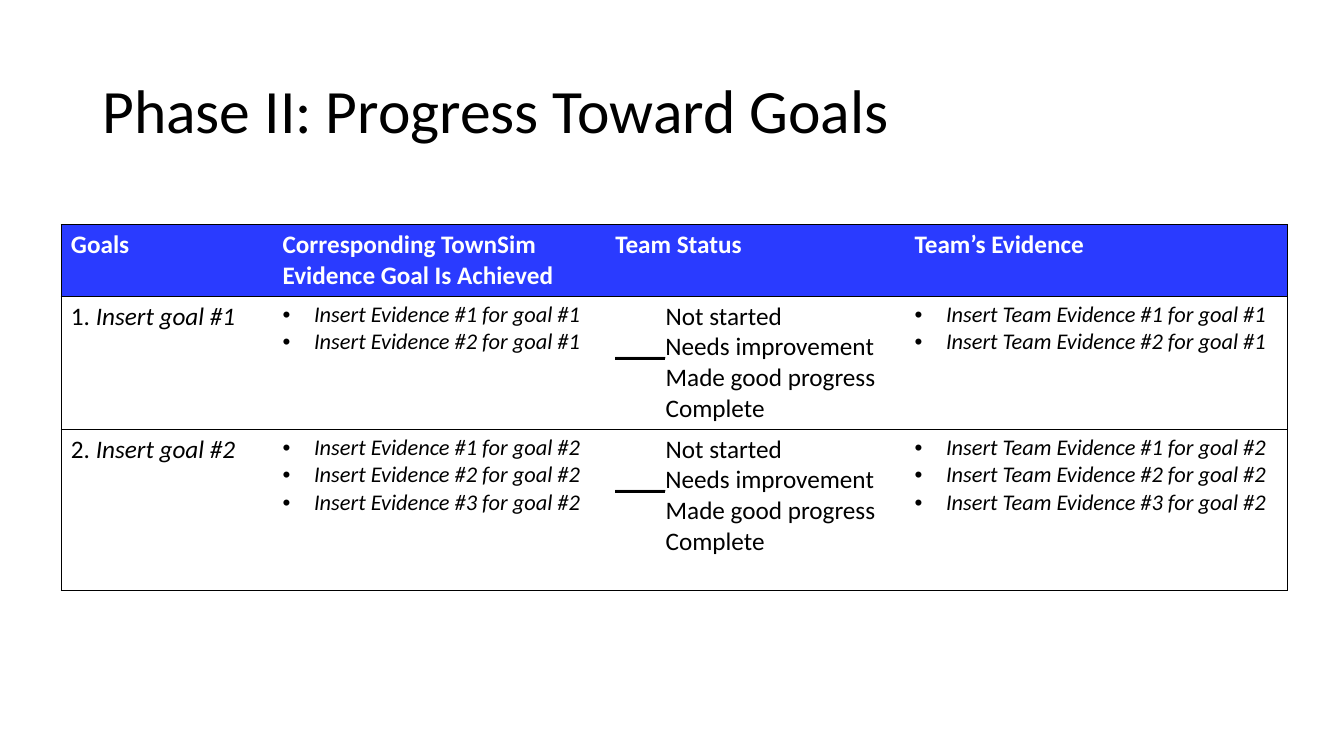
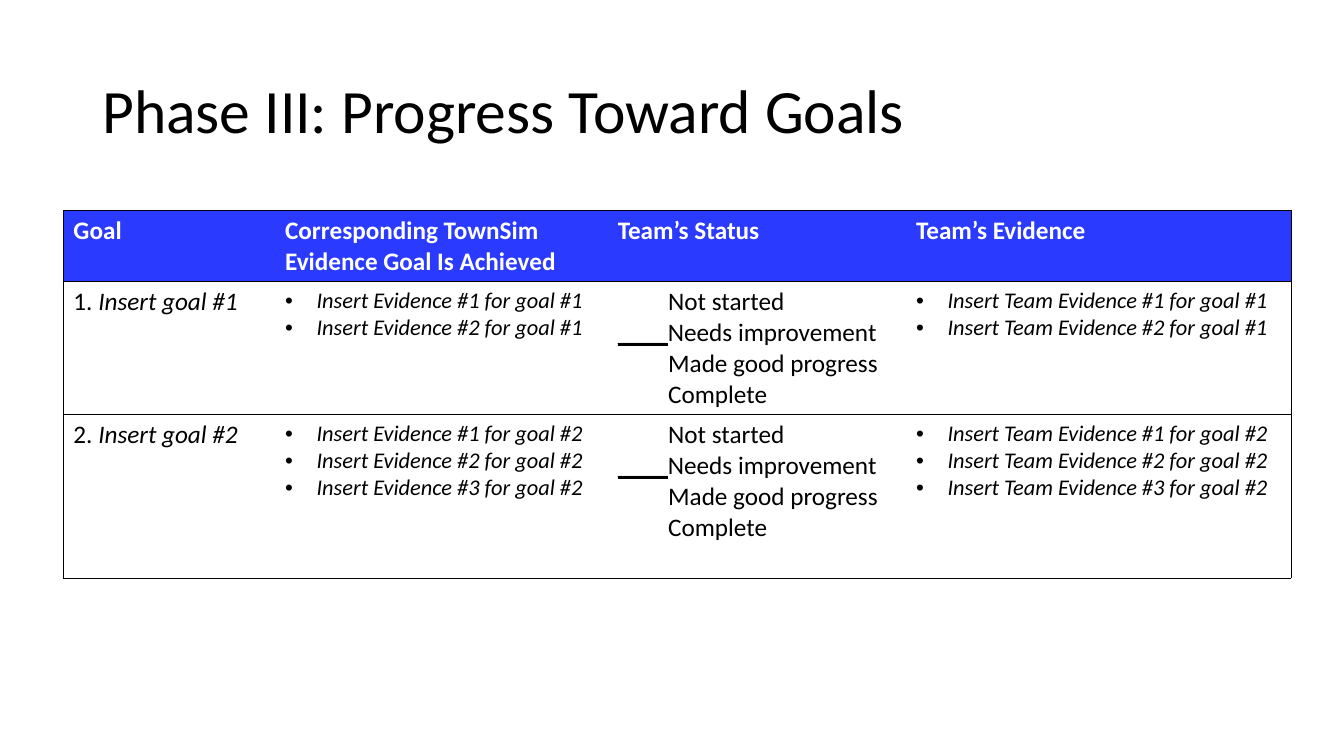
from dataclasses import dataclass

from lxml import etree
from pptx import Presentation
from pptx.dml.color import RGBColor
from pptx.enum.text import MSO_ANCHOR
from pptx.oxml.ns import qn
from pptx.util import Pt

MIDDLE = MSO_ANCHOR.MIDDLE
FONT = "Calibri"
BLACK, WHITE, BLUE = "000000", "FFFFFF", "2A3BFF"
PLAIN_TABLE = "{2D5ABB26-0587-4C30-8999-92F81FD0307C}"
BORDER = Pt(0.5)
BULLET_INDENT = Pt(22.5)
STATUS_TAB = Pt(36)

EVIDENCE_COUNTS = (2, 3)  # evidence items for each goal
STATUSES = (
    ("\t", "Not started"),
    ("____", "Needs improvement"),
    ("\t", "Made good progress"),
    ("\t", "Complete"),
)


@dataclass
class GoalSlide:
    title: str
    headers: tuple[str, ...]
    left: float
    top: float
    widths: tuple[float, ...]
    heights: tuple[float, ...]


SLIDES = (
    GoalSlide(
        "Phase II: Progress Toward Goals",
        ("Goals", "Corresponding TownSim Evidence Goal Is Achieved",
         "Team Status", "Team’s Evidence"),
        43.5, 160.5, (151.2, 237.6, 213.8, 273.6), (51, 95, 115.5),
    ),
    GoalSlide(
        "Phase III: Progress Toward Goals",
        ("Goal", "Corresponding TownSim Evidence Goal Is Achieved",
         "Team’s Status", "Team’s Evidence"),
        45.3, 150.3, (151.2, 237.6, 213.1, 275), (51, 95, 116.5),
    ),
)


def rgb(color: str) -> RGBColor:
    return RGBColor.from_string(color)


def add_text(p, text: str, *, size: float = 18, color: str = BLACK,
             bold: bool = False, italic: bool = False,
             underline: bool = False) -> None:
    r = p.add_run()
    r.text = text
    font = r.font
    font.name, font.size = FONT, Pt(size)
    font.bold, font.italic, font.underline = bold, italic, underline
    font.color.rgb = rgb(color)


def paragraphs(tf, count: int) -> list:
    """Return the first paragraph followed by newly added ones."""
    return [tf.paragraphs[0]] + [tf.add_paragraph() for _ in range(count - 1)]


# Paragraph and cell formatting
def set_bullet(p) -> None:
    pPr = p._p.get_or_add_pPr()
    pPr.set("marL", str(BULLET_INDENT))
    pPr.set("indent", str(-BULLET_INDENT))
    etree.SubElement(pPr, qn("a:buFont"), typeface="Arial")
    etree.SubElement(pPr, qn("a:buChar"), char="•")


def set_tab(p) -> None:
    tabs = etree.SubElement(p._p.get_or_add_pPr(), qn("a:tabLst"))
    etree.SubElement(tabs, qn("a:tab"), pos=str(STATUS_TAB), algn="l")


def set_borders(cell, first: bool, last: bool) -> None:
    """Rule every row; close the sides at the first and last columns."""
    tcPr = cell._tc.get_or_add_tcPr()
    edges = (("a:lnL", first), ("a:lnR", last), ("a:lnT", True), ("a:lnB", True))
    for i, (tag, shown) in enumerate(edges):
        ln = etree.Element(qn(tag), w=str(BORDER))
        if shown:
            fill = etree.SubElement(ln, qn("a:solidFill"))
            etree.SubElement(fill, qn("a:srgbClr"), val=BLACK)
        else:
            etree.SubElement(ln, qn("a:noFill"))
        tcPr.insert(i, ln)


# Cell contents
def fill_goal(tf, goal: int) -> None:
    p = tf.paragraphs[0]
    add_text(p, f"{goal}. ")
    add_text(p, f"Insert goal #{goal}", italic=True)


def fill_evidence(tf, label: str, goal: int, count: int) -> None:
    for n, p in enumerate(paragraphs(tf, count), 1):
        set_bullet(p)
        add_text(p, f"Insert {label} #{n} for goal #{goal}", size=16, italic=True)


def fill_status(tf) -> None:
    for p, (mark, status) in zip(paragraphs(tf, len(STATUSES)), STATUSES):
        set_tab(p)
        add_text(p, mark, underline=True)
        add_text(p, status)


# Slide parts
def add_title(s, title: str) -> None:
    tf = s.shapes.add_textbox(Pt(66), Pt(28.8), Pt(828), Pt(104.4)).text_frame
    tf.word_wrap = True
    tf.vertical_anchor = MIDDLE
    p = tf.paragraphs[0]
    p.line_spacing = 0.9
    add_text(p, title, size=44)


def add_goal_table(s, data: GoalSlide) -> None:
    sp = s.shapes.add_table(
        len(data.heights), len(data.widths), Pt(data.left), Pt(data.top),
        Pt(sum(data.widths)), Pt(sum(data.heights)))
    table = sp.table
    table._tbl.tblPr.find(qn("a:tableStyleId")).text = PLAIN_TABLE
    for col, width in zip(table.columns, data.widths):
        col.width = Pt(width)
    for row, height in zip(table.rows, data.heights):
        row.height = Pt(height)

    for cell, header in zip(table.rows[0].cells, data.headers):
        cell.fill.solid()
        cell.fill.fore_color.rgb = rgb(BLUE)
        add_text(cell.text_frame.paragraphs[0], header, color=WHITE, bold=True)

    for goal, count in enumerate(EVIDENCE_COUNTS, 1):
        cells = list(table.rows[goal].cells)
        for cell in cells:
            cell.fill.background()
        fill_goal(cells[0].text_frame, goal)
        fill_evidence(cells[1].text_frame, "Evidence", goal, count)
        fill_status(cells[2].text_frame)
        fill_evidence(cells[3].text_frame, "Team Evidence", goal, count)

    last = len(data.widths) - 1
    for row in table.rows:
        for i, cell in enumerate(row.cells):
            set_borders(cell, i == 0, i == last)


def main() -> None:
    prs = Presentation()
    prs.slide_width, prs.slide_height = Pt(960), Pt(540)
    for data in SLIDES:
        s = prs.slides.add_slide(prs.slide_layouts[6])
        add_title(s, data.title)
        add_goal_table(s, data)
    prs.save("out.pptx")


if __name__ == "__main__":
    main()
